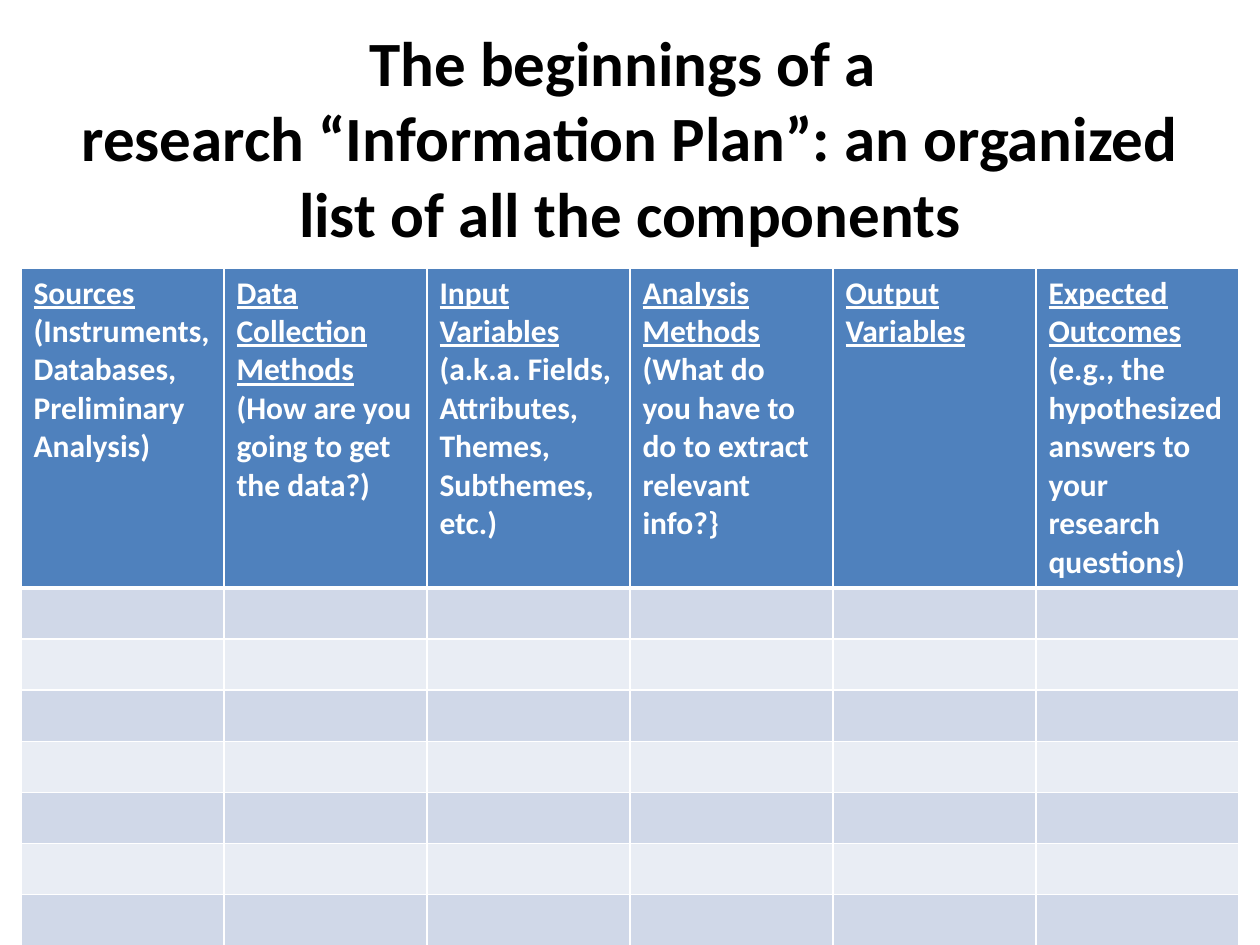
from lxml import etree
from pptx import Presentation
from pptx.dml.color import RGBColor
from pptx.enum.text import MSO_ANCHOR, MSO_AUTO_SIZE, PP_ALIGN
from pptx.oxml.ns import qn
from pptx.util import Pt

CENTER = PP_ALIGN.CENTER
MIDDLE = MSO_ANCHOR.MIDDLE
NO_AUTOFIT = MSO_AUTO_SIZE.NONE

BLACK = RGBColor(0x00, 0x00, 0x00)
WHITE = RGBColor(0xFF, 0xFF, 0xFF)
HEADER_BLUE = RGBColor(0x4F, 0x81, 0xBD)
BAND_COLORS = (RGBColor(0xE9, 0xED, 0xF4), RGBColor(0xD0, 0xD8, 0xE8))

FONT = "Calibri"
TITLE_LINES = (
    "The beginnings of a ",
    "research “Information Plan”: an organized list of all the components",
)
SAME_LINE, LINE_BREAK, NEW_PARAGRAPH = range(3)
HEADERS = (
    ("Sources", SAME_LINE, " (Instruments, Databases, Preliminary Analysis)"),
    ("Data Collection Methods", LINE_BREAK, "(How are you going to get the data?)"),
    ("Input Variables", SAME_LINE, " (a.k.a. Fields, Attributes, Themes, Subthemes, etc.)"),
    ("Analysis Methods", NEW_PARAGRAPH, "(What do you have to do to extract relevant info?}"),
    ("Output Variables", SAME_LINE, ""),
    ("Expected Outcomes", NEW_PARAGRAPH,
     "(e.g., the hypothesized answers to your research questions)"),
)
ROW_COUNT = 8
ROW_HEIGHT = 29.2


def add_text(paragraph, text, size=18, color=WHITE, bold=True, underline=False):
    run = paragraph.add_run()
    run.text = text
    font = run.font
    font.name = FONT
    font.size = Pt(size)
    font.bold = bold
    font.underline = underline
    font.color.rgb = color


def set_borders(cell, left=1, right=1, top=1, bottom=1):
    properties = cell._tc.get_or_add_tcPr()
    for side, width in (("L", left), ("R", right), ("T", top), ("B", bottom)):
        line = etree.SubElement(properties, qn(f"a:ln{side}"), w=str(Pt(width)))
        fill = etree.SubElement(line, qn("a:solidFill"))
        etree.SubElement(fill, qn("a:srgbClr"), val=str(WHITE))


def set_title(slide, left, top, width, height):
    title = slide.shapes.title
    title.left, title.top = Pt(left), Pt(top)
    title.width, title.height = Pt(width), Pt(height)
    frame = title.text_frame
    frame.word_wrap = True
    frame.auto_size = NO_AUTOFIT
    frame.vertical_anchor = MIDDLE
    paragraph = frame.paragraphs[0]
    paragraph.alignment = CENTER
    for index, line in enumerate(TITLE_LINES):
        if index:
            paragraph.add_line_break()
        add_text(paragraph, line, size=36, color=BLACK)


def fill_header(cell, term, joiner, detail):
    frame = cell.text_frame
    paragraph = frame.paragraphs[0]
    add_text(paragraph, term, underline=True)
    if joiner == LINE_BREAK:
        paragraph.add_line_break()
    elif joiner == NEW_PARAGRAPH:
        paragraph = frame.add_paragraph()
    if detail:
        add_text(paragraph, detail)


def add_plan_table(slide, left, top, width, height):
    shape = slide.shapes.add_table(
        ROW_COUNT, len(HEADERS), Pt(left), Pt(top), Pt(width), Pt(height))
    table = shape.table
    for row_index, row in enumerate(table.rows):
        row.height = Pt(ROW_HEIGHT)
        for cell in row.cells:
            set_borders(cell, top=3 if row_index == 1 else 1,
                        bottom=3 if row_index == 0 else 1)
            cell.fill.solid()
            cell.fill.fore_color.rgb = BAND_COLORS[row_index % 2] if row_index else HEADER_BLUE
    for column, header in enumerate(HEADERS):
        fill_header(table.cell(0, column), *header)
    shape.height = Pt(height)


def main():
    presentation = Presentation()
    presentation.slide_width = Pt(720)
    presentation.slide_height = Pt(540)
    slide = presentation.slides.add_slide(presentation.slide_layouts[5])
    set_title(slide, 36, 12, 648, 132)
    add_plan_table(slide, 12, 153, 696, 363)
    presentation.save("out.pptx")


if __name__ == "__main__":
    main()
